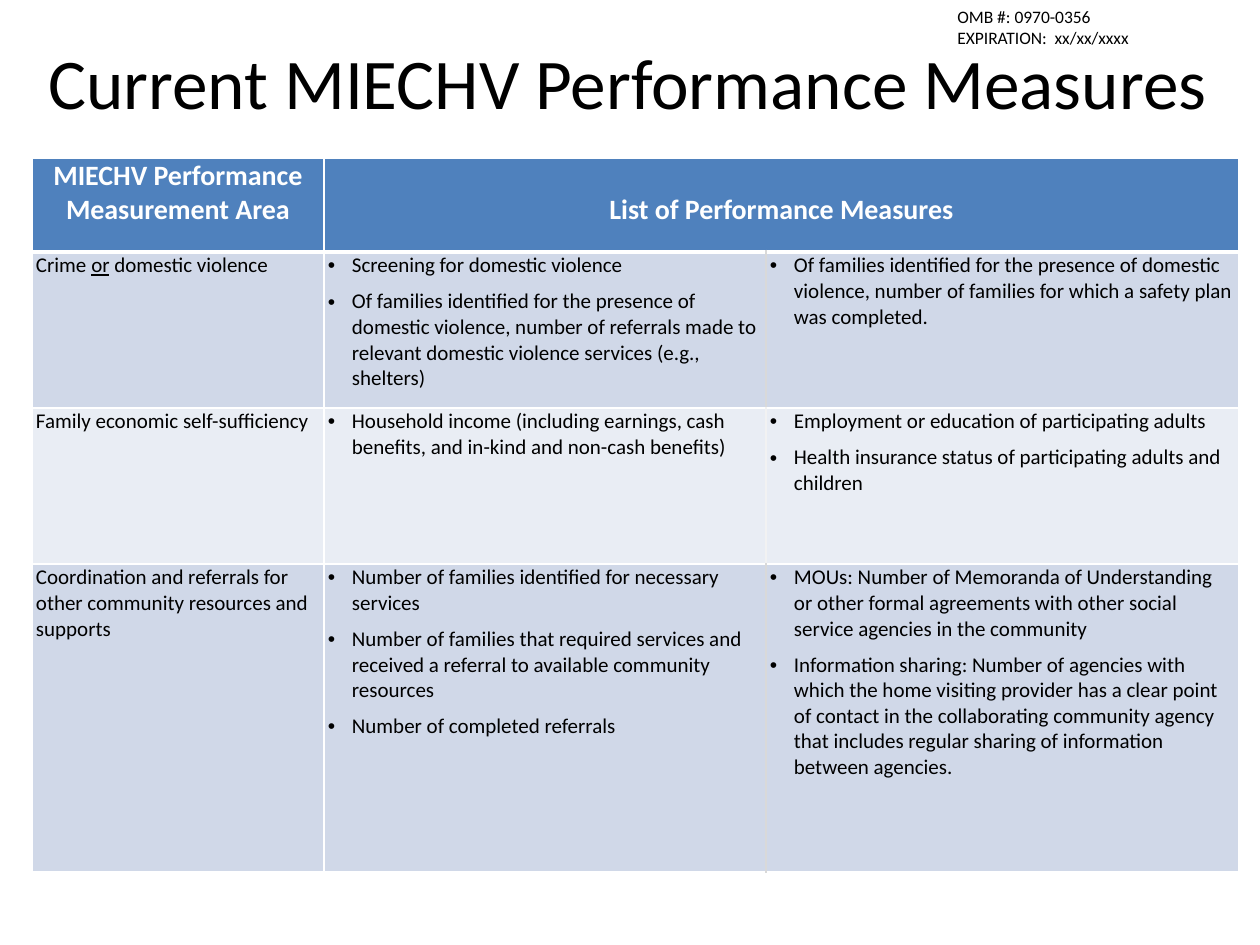
from dataclasses import dataclass

from lxml import etree
from pptx import Presentation
from pptx.dml.color import RGBColor
from pptx.enum.text import MSO_ANCHOR, MSO_AUTO_SIZE, PP_ALIGN
from pptx.oxml.ns import qn
from pptx.util import Emu, Pt

CENTER, LEFT = PP_ALIGN.CENTER, PP_ALIGN.LEFT
MIDDLE, TOP = MSO_ANCHOR.MIDDLE, MSO_ANCHOR.TOP
NO_FIT = MSO_AUTO_SIZE.NONE
TITLE_ONLY = 5
PX_PER_INCH = 126


@dataclass(frozen=True)
class Theme:
    font: str = "Calibri"
    ink: str = "000000"
    white: str = "FFFFFF"
    header: str = "4F81BD"
    bands: tuple = ("D0D8E8", "E9EDF4")
    dividers: tuple = ("D9D9D9", "F2F2F2")
    title_size: float = 40.7
    header_size: int = 16
    body_size: int = 12
    note_size: int = 10
    bullet_gap: int = 6
    rule: int = 1
    header_rule: int = 3


THEME = Theme()

TITLE = "Current MIECHV Performance Measures "
NOTICE = ("OMB #: 0970-0356", "EXPIRATION:  xx/xx/xxxx")
HEADERS = ("MIECHV Performance Measurement Area", "List of Performance Measures")
COLUMNS = (292, 442, 473)
ROWS = (94, 156, 156, 308)

# Each row: runs of the area as (text, underlined), then two lists of measures
MEASURES = (
    (
        (("Crime ", False), ("or", True), (" domestic violence", False)),
        (
            "Screening for domestic violence",
            "Of families identified for the presence of domestic violence, number of "
            "referrals made to relevant domestic violence services (e.g., shelters)",
        ),
        (
            "Of families identified for the presence of domestic violence, number of "
            "families for which a safety plan was completed.",
        ),
    ),
    (
        (("Family economic self-sufficiency", False),),
        (
            "Household income (including earnings, cash benefits, and in-kind and "
            "non-cash benefits)",
        ),
        (
            "Employment or education of participating adults",
            "Health insurance status of participating adults and children",
        ),
    ),
    (
        (("Coordination and referrals for other community resources and supports", False),),
        (
            "Number of families identified for necessary services",
            "Number of families that required services and received a referral to "
            "available community resources",
            "Number of completed referrals",
        ),
        (
            "MOUs: Number of Memoranda of Understanding or other formal agreements "
            "with other social service agencies in the community",
            "Information sharing: Number of agencies with which the home visiting "
            "provider has a clear point of contact in the collaborating community "
            "agency that includes regular sharing of information between agencies.",
        ),
    ),
)


def px(length):
    return Emu(round(length * 914400 / PX_PER_INCH))


def add_run(paragraph, text, size, color=THEME.ink, bold=False, underline=False):
    run = paragraph.add_run()
    run.text = text
    font = run.font
    font.name, font.size = THEME.font, Pt(size)
    font.bold, font.underline = bold, underline
    font.color.rgb = RGBColor.from_string(color)


def next_paragraph(frame, index):
    return frame.add_paragraph() if index else frame.paragraphs[0]


def set_bullet(paragraph):
    properties = paragraph._p.get_or_add_pPr()
    properties.set("marL", str(px(24)))
    properties.set("indent", str(-px(24)))
    etree.SubElement(properties, qn("a:buFont")).set("typeface", "Arial")
    etree.SubElement(properties, qn("a:buChar")).set("char", "•")


def set_borders(cell, left, right, bottom_width):
    edges = (
        ("a:lnL", left, THEME.rule),
        ("a:lnR", right, THEME.rule),
        ("a:lnT", THEME.white, THEME.rule),
        ("a:lnB", THEME.white, bottom_width),
    )
    properties = cell._tc.get_or_add_tcPr()
    for index, (tag, color, width) in enumerate(edges):
        line = etree.Element(qn(tag), w=str(Pt(width)))
        fill = etree.SubElement(line, qn("a:solidFill"))
        etree.SubElement(fill, qn("a:srgbClr")).set("val", color)
        properties.insert(index, line)


def format_cell(cell, fill, left=THEME.white, right=THEME.white, bottom_width=THEME.rule):
    cell.margin_left = cell.margin_right = px(4)
    cell.margin_top = cell.margin_bottom = px(1)
    cell.vertical_anchor = TOP
    cell.fill.solid()
    cell.fill.fore_color.rgb = RGBColor.from_string(fill)
    set_borders(cell, left, right, bottom_width)


def fill_bullets(cell, items):
    for index, item in enumerate(items):
        paragraph = next_paragraph(cell.text_frame, index)
        paragraph.space_after = Pt(THEME.bullet_gap)
        set_bullet(paragraph)
        add_run(paragraph, item, THEME.body_size)


def place_title(slide, left, top, width, height):
    title = slide.shapes.title
    title.left, title.top, title.width, title.height = map(px, (left, top, width, height))
    frame = title.text_frame
    frame.auto_size, frame.vertical_anchor, frame.word_wrap = NO_FIT, MIDDLE, True
    paragraph = frame.paragraphs[0]
    paragraph.alignment = CENTER
    add_run(paragraph, TITLE, THEME.title_size)


def add_notice(slide, left, top, width, height):
    frame = slide.shapes.add_textbox(*map(px, (left, top, width, height))).text_frame
    frame.word_wrap = True
    for index, line in enumerate(NOTICE):
        paragraph = next_paragraph(frame, index)
        paragraph.alignment = LEFT
        add_run(paragraph, line, THEME.note_size)


def add_measures_table(slide, left, top):
    box = map(px, (left, top, sum(COLUMNS), sum(ROWS)))
    table = slide.shapes.add_table(len(ROWS), len(COLUMNS), *box).table
    for column, width in zip(table.columns, COLUMNS):
        column.width = px(width)
    for row, height in zip(table.rows, ROWS):
        row.height = px(height)

    # Header row, with the second heading across both lists
    for cell in table.rows[0].cells:
        format_cell(cell, THEME.header, bottom_width=THEME.header_rule)
    table.cell(0, 1).merge(table.cell(0, 2))
    for index, heading in enumerate(HEADERS):
        paragraph = table.cell(0, index).text_frame.paragraphs[0]
        paragraph.alignment = CENTER
        add_run(paragraph, heading, THEME.header_size, THEME.white, bold=True)
    table.cell(0, 1).text_frame.paragraphs[0].line_spacing = 2.0

    # Banded rows of measures
    for index, (area_runs, first_list, second_list) in enumerate(MEASURES):
        band, divider = THEME.bands[index % 2], THEME.dividers[index % 2]
        area, first, second = table.rows[index + 1].cells
        format_cell(area, band)
        format_cell(first, band, right=divider)
        format_cell(second, band, left=divider)
        for text, underlined in area_runs:
            add_run(area.text_frame.paragraphs[0], text, THEME.body_size, underline=underlined)
        fill_bullets(first, first_list)
        fill_bullets(second, second_list)


def main():
    deck = Presentation()
    deck.slide_width, deck.slide_height = px(1260), px(945)
    slide = deck.slides.add_slide(deck.slide_layouts[TITLE_ONLY])
    add_measures_table(slide, 32, 158)
    place_title(slide, 21, 3, 1229, 157)
    add_notice(slide, 945, 0, 315, 93)
    deck.save("out.pptx")


if __name__ == "__main__":
    main()
